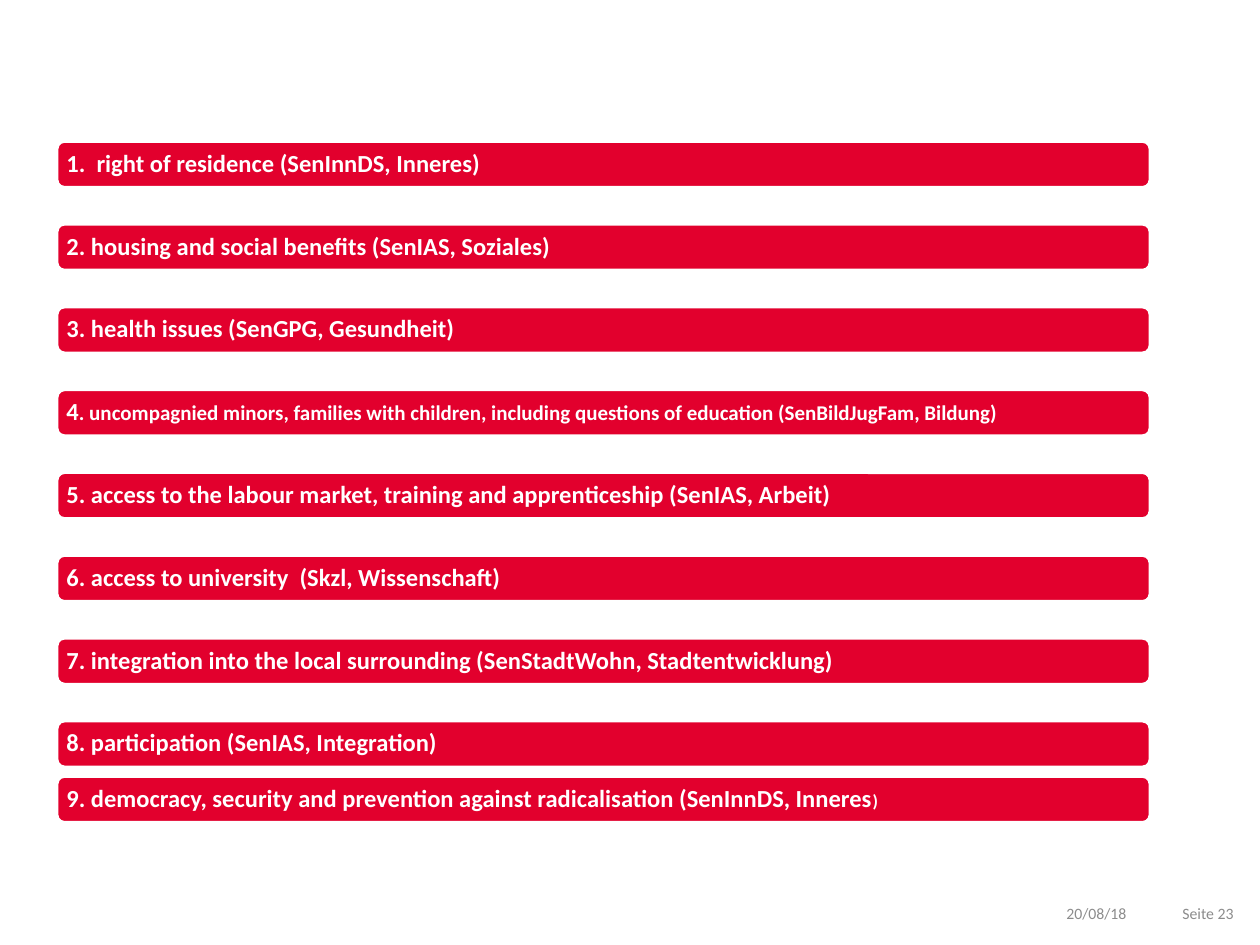
from pptx import Presentation
from pptx.dml.color import RGBColor
from pptx.enum.shapes import MSO_SHAPE
from pptx.enum.text import MSO_ANCHOR, PP_ALIGN
from pptx.util import Inches, Pt

TOPICS = [
    [("1.  right of residence (SenInnDS, Inneres)", 14)],
    [("2. housing and social benefits (SenIAS, Soziales)", 14)],
    [("3. health issues (SenGPG, Gesundheit)", 14)],
    [("4", 14), (". uncompagnied minors, families with children, including "
                 "questions of education (SenBildJugFam, Bildung)", 12)],
    [("5. access to the labour market, training and apprenticeship (SenIAS, Arbeit)", 14)],
    [("6. access to university  (Skzl, Wissenschaft)", 14)],
    [("7. integration into the local surrounding (SenStadtWohn, Stadtentwicklung)", 14)],
    [("8. participation (SenIAS, Integration)", 14)],
    [("9. democracy, security and prevention against radicalisation "
      "(SenInnDS, Inneres", 14), (")", 10)],
]
FOOTER = [("20/08/18", 8.11, 0.83), ("Seite 23", 9.13, 0.66)]
RED, WHITE, GREY = "E2002D", "FFFFFF", "8C8C8C"
LEFT, WIDTH, HEIGHT = 0.45, 8.68, 0.37
FIRST, EIGHTH, LAST = 1.12, 5.72, 6.16


def paint(target, color):
    """Set a colour object from a hex string."""
    target.rgb = RGBColor.from_string(color)


def apply(target, values):
    """Set attributes from a dict of format values."""
    for name, value in values.items():
        setattr(target, name, value)


def write(shape, runs, color, bold, inset, frame, para):
    """Fill a shape with one paragraph of sized runs."""
    sides = ("left", "top", "right", "bottom")
    margins = {f"margin_{side}": Inches(inset) for side in sides}
    apply(shape.text_frame, {"word_wrap": True, **margins, **frame})
    line = shape.text_frame.paragraphs[0]
    apply(line, para)
    for text, size in runs:
        run = line.add_run()
        run.text = text
        apply(run.font, {"name": "Calibri", "size": Pt(size), "bold": bold})
        paint(run.font.color, color)


def add_bar(slide, top, runs):
    """Draw one red topic bar with its text."""
    bar = slide.shapes.add_shape(MSO_SHAPE.ROUNDED_RECTANGLE, Inches(LEFT),
                                 Inches(top), Inches(WIDTH), Inches(HEIGHT))
    bar.shadow.inherit = False
    bar.fill.solid()
    paint(bar.fill.fore_color, RED)
    paint(bar.line.color, WHITE)
    bar.line.width = Pt(2)
    write(bar, runs, WHITE, True, 0.06, {"vertical_anchor": MSO_ANCHOR.MIDDLE},
          {"alignment": PP_ALIGN.LEFT, "line_spacing": 0.9})


def main():
    """Build the slide and save it."""
    deck = Presentation()
    apply(deck, {"slide_width": Inches(10), "slide_height": Inches(7.5)})
    slide = deck.slides.add_slide(deck.slide_layouts[6])
    step = (EIGHTH - FIRST) / 7
    tops = [FIRST + step * i for i in range(8)] + [LAST]
    for top, runs in zip(tops, TOPICS):
        add_bar(slide, top, runs)
    for text, left, width in FOOTER:
        box = slide.shapes.add_textbox(Inches(left), Inches(7.17),
                                       Inches(width), Inches(0.2))
        write(box, [(text, 9)], GREY, False, 0, {}, {"alignment": PP_ALIGN.RIGHT})
    deck.save("out.pptx")


if __name__ == "__main__":
    main()
